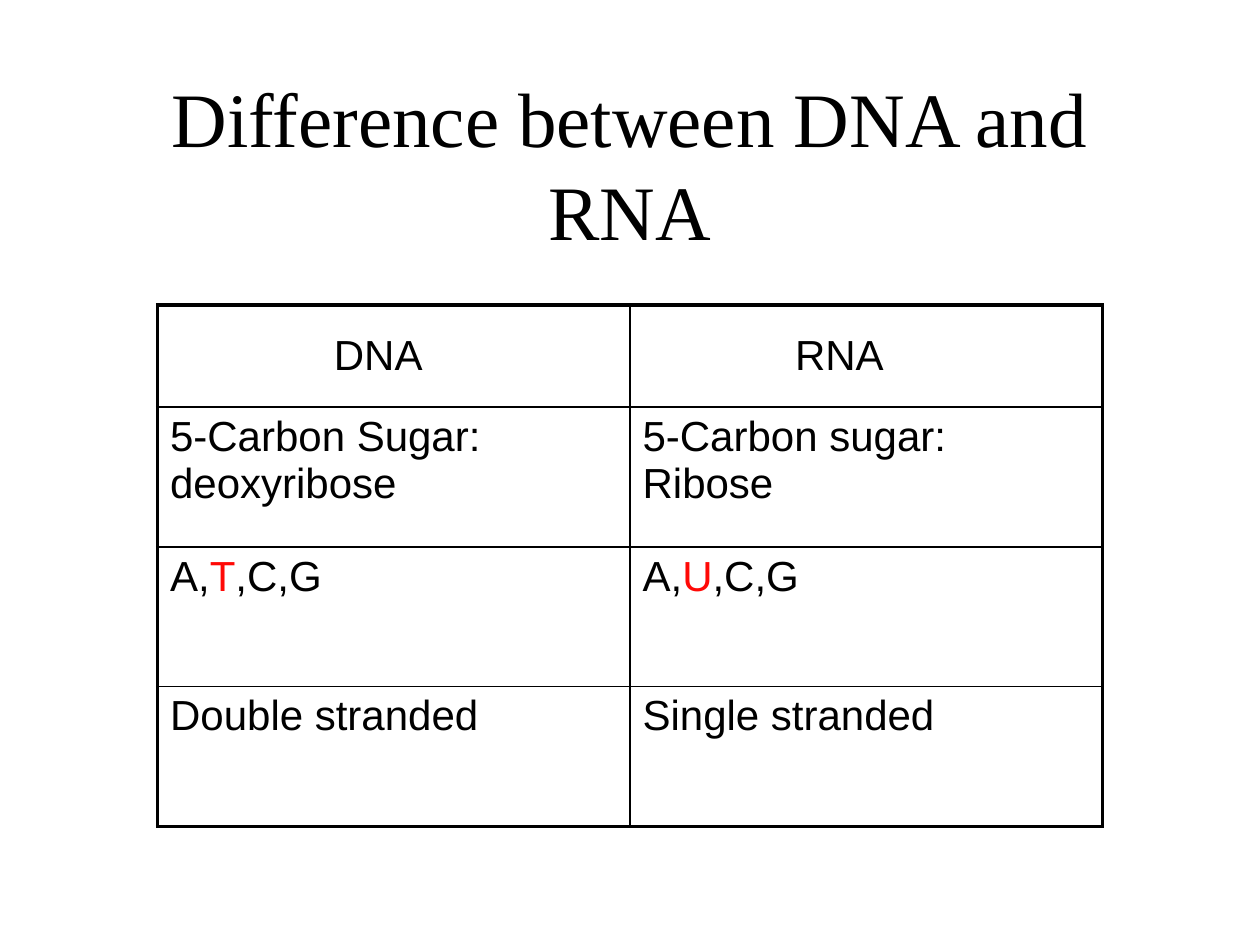
import dataclasses
import typing

import lxml.etree
import pptx
import pptx.dml.color
import pptx.enum.text
import pptx.oxml.ns
import pptx.util

Inches = pptx.util.Inches
Pt = pptx.util.Pt
ALIGN = pptx.enum.text.PP_ALIGN
ANCHOR = pptx.enum.text.MSO_ANCHOR

COLORS = {"text": "000000", "accent": "FF0906", "border": "000000"}
TITLE_FONT = {"name": "Times New Roman", "size": Pt(44)}
CELL_FONT = {"name": "Arial", "size": Pt(24)}
OUTER, INNER = 2.25, 1
COL_WIDTH = 3.75
ROW_HEIGHTS = [0.81, 1.11, 1.11, 1.11]


@dataclasses.dataclass
class Run:
    text: str
    color: str = "text"


@dataclasses.dataclass
class Cell:
    paragraphs: list[list[Run]]
    format: dict[str, typing.Any] = dataclasses.field(default_factory=dict)


def heading(text: str, left: float) -> Cell:
    return Cell([[Run(text)]], {"margin_left": Inches(left), "vertical_anchor": ANCHOR.MIDDLE})


def lines(*texts: str) -> Cell:
    return Cell([[Run(text)] for text in texts])


def bases(marked: str) -> Cell:
    return Cell([[Run("A,"), Run(marked, "accent"), Run(",C,G")]])


ROWS = [
    [heading("DNA", 1.4), heading("RNA", 1.31)],
    [lines("5-Carbon Sugar: deoxyribose"), lines("5-Carbon sugar:", "Ribose")],
    [bases("T"), bases("U")],
    [lines("Double stranded"), lines("Single stranded")],
]


def set_attrs(obj: typing.Any, values: dict[str, typing.Any]) -> None:
    for name, value in values.items():
        setattr(obj, name, value)


def add_run(p: typing.Any, run: Run, font: dict[str, typing.Any]) -> None:
    r = p.add_run()
    r.text = run.text
    set_attrs(r.font, font)
    r.font.color.rgb = pptx.dml.color.RGBColor.from_string(COLORS[run.color])


def set_borders(cell: typing.Any, widths: dict[str, float]) -> None:
    qn = pptx.oxml.ns.qn
    tcPr = cell._tc.get_or_add_tcPr()
    for i, (side, width) in enumerate(widths.items()):
        ln = lxml.etree.Element(qn(f"a:ln{side}"), w=str(Pt(width)))
        fill = lxml.etree.SubElement(ln, qn("a:solidFill"))
        lxml.etree.SubElement(fill, qn("a:srgbClr"), val=COLORS["border"])
        tcPr.insert(i, ln)


def add_title(s: typing.Any, text: str) -> None:
    sp = s.shapes.title
    set_attrs(sp, {"left": Inches(0.75), "top": Inches(0.67),
                   "width": Inches(8.5), "height": Inches(1.25)})
    tf = sp.text_frame
    set_attrs(tf, {"word_wrap": True, "vertical_anchor": ANCHOR.MIDDLE,
                   "auto_size": pptx.enum.text.MSO_AUTO_SIZE.NONE})
    p = tf.paragraphs[0]
    p.alignment = ALIGN.CENTER
    add_run(p, Run(text), TITLE_FONT)


def fill_cell(cell: typing.Any, content: Cell) -> None:
    set_attrs(cell, content.format)
    cell.fill.background()
    tf = cell.text_frame
    for i, runs in enumerate(content.paragraphs):
        p = tf.add_paragraph() if i else tf.paragraphs[0]
        p.alignment = ALIGN.LEFT
        for run in runs:
            add_run(p, run, CELL_FONT)


def add_comparison(s: typing.Any, rows: list[list[Cell]]) -> None:
    n_rows, n_cols = len(rows), len(rows[0])
    table = s.shapes.add_table(n_rows, n_cols, Inches(1.25), Inches(2.42),
                               Inches(COL_WIDTH * n_cols), Inches(sum(ROW_HEIGHTS))).table
    set_attrs(table, {"first_row": False, "horz_banding": False})
    for col in table.columns:
        col.width = Inches(COL_WIDTH)
    for i, row in enumerate(rows):
        table.rows[i].height = Inches(ROW_HEIGHTS[i])
        for j, content in enumerate(row):
            cell = table.cell(i, j)
            fill_cell(cell, content)
            edges = {"L": j == 0, "R": j == n_cols - 1, "T": i == 0, "B": i == n_rows - 1}
            set_borders(cell, {side: OUTER if outer else INNER for side, outer in edges.items()})


def main() -> None:
    prs = pptx.Presentation()
    set_attrs(prs, {"slide_width": Inches(10), "slide_height": Inches(7.5)})
    s = prs.slides.add_slide(prs.slide_layouts.get_by_name("Title Only"))
    add_title(s, "Difference between DNA and RNA")
    add_comparison(s, ROWS)
    prs.save("out.pptx")


if __name__ == "__main__":
    main()
